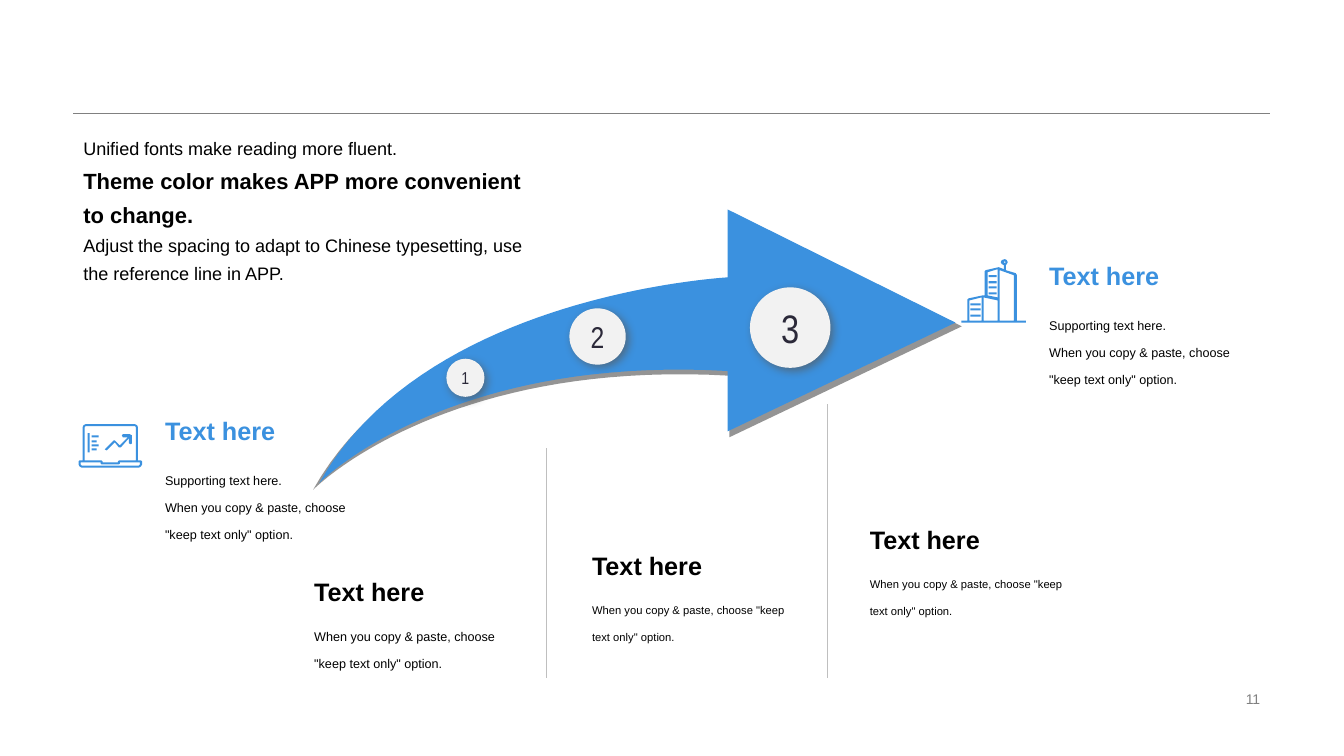
from dataclasses import dataclass

from lxml import etree
from pptx import Presentation
from pptx.dml.color import RGBColor
from pptx.enum.dml import MSO_LINE
from pptx.enum.shapes import MSO_CONNECTOR, MSO_SHAPE
from pptx.enum.text import MSO_ANCHOR, PP_ALIGN
from pptx.oxml.ns import qn
from pptx.util import Cm, Pt

STRAIGHT = MSO_CONNECTOR.STRAIGHT
ROUNDED = MSO_SHAPE.ROUNDED_RECTANGLE
DOTTED = MSO_LINE.ROUND_DOT
TOP, MIDDLE, BOTTOM = MSO_ANCHOR.TOP, MSO_ANCHOR.MIDDLE, MSO_ANCHOR.BOTTOM
LEFT, CENTER, RIGHT = PP_ALIGN.LEFT, PP_ALIGN.CENTER, PP_ALIGN.RIGHT

BLUE = RGBColor(0x3B, 0x91, 0xDF)
BLACK = RGBColor(0, 0, 0)
GREY = RGBColor(0x80, 0x80, 0x80)
LIGHT_GREY = RGBColor(0xBF, 0xBF, 0xBF)
DARK_GREY = RGBColor(0x59, 0x59, 0x59)
PALE = RGBColor(0xF2, 0xF2, 0xF2)
INK = RGBColor(0x2B, 0x29, 0x39)

HEADING = "Text here"
SUPPORT = "Supporting text here."
HINT = 'When you copy & paste, choose "keep text only" option.'
BLOCK_W, HEADING_H = 5.87, 1.14
ICON_UNIT = Cm(0.0254)

Points = list[tuple[float, float]]


@dataclass
class Para:
    text: str
    size: float
    color: RGBColor = BLACK
    bold: bool = False
    spacing: float = 1.0
    font: str = "Arial"


@dataclass
class Block:
    left: float
    top: float
    color: RGBColor
    anchor: MSO_ANCHOR
    body: list[Para]


@dataclass
class Badge:
    left: float
    top: float
    size: float
    number: str
    font_size: float


@dataclass
class Rule:
    x1: float
    y1: float
    x2: float
    y2: float
    color: RGBColor
    dash: MSO_LINE | None = None


@dataclass
class Icon:
    left: float
    top: float
    contours: list[Points]


def rect(x: float, y: float, w: float, h: float) -> Points:
    return [(x, y), (x + w, y), (x + w, y + h), (x, y + h)]


def bezier(a, b, c, d, steps: int = 40) -> Points:
    """Points along a cubic curve from a to d."""
    ts = [i / steps for i in range(steps + 1)]
    return [tuple((1 - t) ** 3 * a[k] + 3 * t * (1 - t) ** 2 * b[k]
                  + 3 * t * t * (1 - t) * c[k] + t ** 3 * d[k] for k in (0, 1))
            for t in ts]


RULES = [Rule(1.85, 2.84, 32, 2.84, GREY),
         Rule(13.77, 11.3, 13.77, 17.07, LIGHT_GREY, DOTTED),
         Rule(20.85, 10.19, 20.85, 17.07, LIGHT_GREY, DOTTED)]

TAIL = (8.05, 12.17)
ARROW = [(24.08, 8.13), (18.34, 5.28),
         *bezier((18.34, 6.99), (17.6, 7.04), (10.59, 7.62), TAIL),
         *bezier(TAIL, TAIL, (11.2, 8.94), (18.34, 9.35)),
         (18.34, 10.87)]

BADGES = [Badge(11.25, 9.04, 0.96, "1", 12.3),
          Badge(14.35, 7.77, 1.42, "2", 21.5),
          Badge(18.9, 7.24, 2.03, "3", 28.4)]

SIDE_BODY = [Para(SUPPORT, 9, spacing=1.8), Para(HINT, 9, spacing=1.8)]
BLOCKS = [Block(7.67 + 7 * i, 14.27 - 0.66 * i, BLACK, BOTTOM,
                [Para(HINT, size, spacing=spacing)])
          for i, (size, spacing) in enumerate([(9, 1.8), (8, 2), (8, 2)])]
BLOCKS += [Block(3.91, 10.34, BLUE, TOP, SIDE_BODY),
           Block(26.19, 6.43, BLUE, TOP, SIDE_BODY)]

INTRO = [
    Para("Unified fonts make reading more fluent.", 12.9, spacing=1.3),
    Para("Theme color makes APP more convenient to change.", 15.7, bold=True, spacing=1.3),
    Para("Adjust the spacing to adapt to Chinese typesetting, use the reference line in APP.",
         12.9, spacing=1.3)]

LAPTOP = Icon(1.98, 10.69, [
    [(7, 0), (56, 0), (58, 1), (59, 3), (59, 36), (62, 36), (63, 37), (63, 40), (62, 42),
     (60, 43), (3, 43), (1, 42), (0, 40), (0, 37), (1, 36), (4, 36), (4, 3), (5, 1)],
    [(7, 2), (6, 3), (6, 36), (23, 36), (24, 37), (24, 38), (39, 38), (39, 37), (40, 36),
     (57, 36), (57, 3), (56, 2)],
    [(2, 38), (2, 40), (3, 41), (60, 41), (61, 40), (61, 38), (41, 38), (41, 39), (40, 40),
     (23, 40), (22, 39), (22, 38)],
    [(44, 10), (51, 10), (53, 11), (53, 19), (52, 20), (50, 19), (50, 14), (42, 23), (40, 23),
     (36, 18), (28, 26), (26, 25), (35, 16), (36, 16), (41, 21), (49, 13), (44, 13), (43, 11)],
    rect(9, 9, 2, 19),
    *[rect(13, y, w, 2) for y, w in [(11, 7), (16, 5), (20, 7), (24, 5)]]])

BUILDINGS = Icon(24.23, 6.53, [
    [(43, 0), (45, 1), (46, 3), (45, 5), (44, 6), (44, 11), (54, 14), (55, 16), (55, 61),
     (64, 61), (64, 63), (0, 63), (0, 61), (6, 61), (6, 40), (7, 39), (21, 36), (23, 36),
     (23, 12), (24, 11), (37, 8), (42, 10), (42, 6), (40, 5), (39, 3), (40, 1)],
    [(22, 38), (22, 61), (36, 61), (36, 41)],
    [(20, 38), (8, 41), (8, 61), (20, 61)],
    [(38, 11), (38, 61), (52, 61), (52, 16)],
    [(36, 10), (26, 13), (26, 36), (36, 38)],
    [(43, 2), (42, 3), (43, 4), (44, 3)],
    *[rect(9, y, 10, 2) for y in (44, 49, 55)],
    *[rect(27, y, 8, 2) for y in (16, 22, 27, 33)]])


def paint(sp, color: RGBColor) -> None:
    sp.shadow.inherit = False
    sp.fill.solid()
    sp.fill.fore_color.rgb = color
    sp.line.fill.background()


def add_shadow(sp, color: RGBColor, alpha: int, blur: float, angle: int, scale: int = 100) -> None:
    effects = sp._element.spPr.find(qn("a:effectLst"))
    shadow = etree.SubElement(effects, qn("a:outerShdw"), {
        "blurRad": str(Pt(blur)), "dist": str(Pt(3)), "dir": str(angle * 60000),
        "sx": str(scale * 1000), "sy": str(scale * 1000), "algn": "ctr", "rotWithShape": "0"})
    rgb = etree.SubElement(shadow, qn("a:srgbClr"), val=str(color))
    etree.SubElement(rgb, qn("a:alpha"), val=str(alpha * 1000))


def write(tf, paras: list[Para], anchor=TOP, align=LEFT, wrap: bool = True) -> None:
    tf.word_wrap = wrap
    tf.vertical_anchor = anchor
    for i, para in enumerate(paras):
        p = tf.paragraphs[0] if i == 0 else tf.add_paragraph()
        p.alignment = align
        p.line_spacing = para.spacing
        r = p.add_run()
        r.text = para.text
        r.font.color.rgb = para.color
        fmt = {"name": para.font, "size": Pt(para.size), "bold": para.bold}
        for name, value in fmt.items():
            setattr(r.font, name, value)


def add_text(s, x: float, y: float, w: float, h: float, paras: list[Para],
             anchor=TOP, align=LEFT) -> None:
    tb = s.shapes.add_textbox(Cm(x), Cm(y), Cm(w), Cm(h))
    write(tb.text_frame, paras, anchor, align)


def add_rule(s, rule: Rule) -> None:
    line = s.shapes.add_connector(STRAIGHT, Cm(rule.x1), Cm(rule.y1), Cm(rule.x2), Cm(rule.y2))
    line.line.color.rgb = rule.color
    line.line.width = Pt(0.25)
    if rule.dash is not None:
        line.line.dash_style = rule.dash
    etree.SubElement(line._element.spPr, qn("a:effectLst"))


def add_outline(s, contours: list[Points], scale: float = 1.0, x: float = 0, y: float = 0):
    """Draw closed contours as one blue shape; inner contours are holes."""
    builder = s.shapes.build_freeform(*contours[0][0], scale=scale)
    builder.add_line_segments(contours[0][1:])
    for points in contours[1:]:
        builder.move_to(*points[0])
        builder.add_line_segments(points[1:])
    sp = builder.convert_to_shape(Cm(x), Cm(y))
    paint(sp, BLUE)
    return sp


def add_badge(s, b: Badge) -> None:
    sp = s.shapes.add_shape(ROUNDED, Cm(b.left), Cm(b.top), Cm(b.size), Cm(b.size))
    sp.adjustments[0] = 0.5
    paint(sp, PALE)
    add_shadow(sp, DARK_GREY, 64, 6, 45)
    tf = sp.text_frame
    for side in ("left", "top", "right", "bottom"):
        setattr(tf, f"margin_{side}", 0)
    write(tf, [Para(b.number, b.font_size, INK, font="Arial Narrow")], MIDDLE, CENTER, False)


def add_block(s, b: Block) -> None:
    add_text(s, b.left, b.top + HEADING_H, BLOCK_W, 1.55 if len(b.body) == 1 else 2.51, b.body)
    add_text(s, b.left, b.top, BLOCK_W, HEADING_H, [Para(HEADING, 18, b.color, True)], b.anchor)


def main() -> None:
    prs = Presentation()
    prs.slide_width, prs.slide_height = Cm(33.87), Cm(19.05)
    s = prs.slides.add_slide(prs.slide_layouts[6])
    for rule in RULES:
        add_rule(s, rule)
    add_text(s, 23.93, 17.32, 8.08, 0.58, [Para("11", 10, GREY)], MIDDLE, RIGHT)
    arrow = add_outline(s, [[(Cm(x), Cm(y)) for x, y in ARROW]])
    add_shadow(arrow, GREY, 84, 0, 90, 102)
    for badge in BADGES:
        add_badge(s, badge)
    for block in BLOCKS:
        add_block(s, block)
    for icon in (LAPTOP, BUILDINGS):
        add_outline(s, icon.contours, ICON_UNIT, icon.left, icon.top)
    add_text(s, 1.85, 3.18, 12.09, 4.24, INTRO)
    prs.save("out.pptx")


if __name__ == "__main__":
    main()
